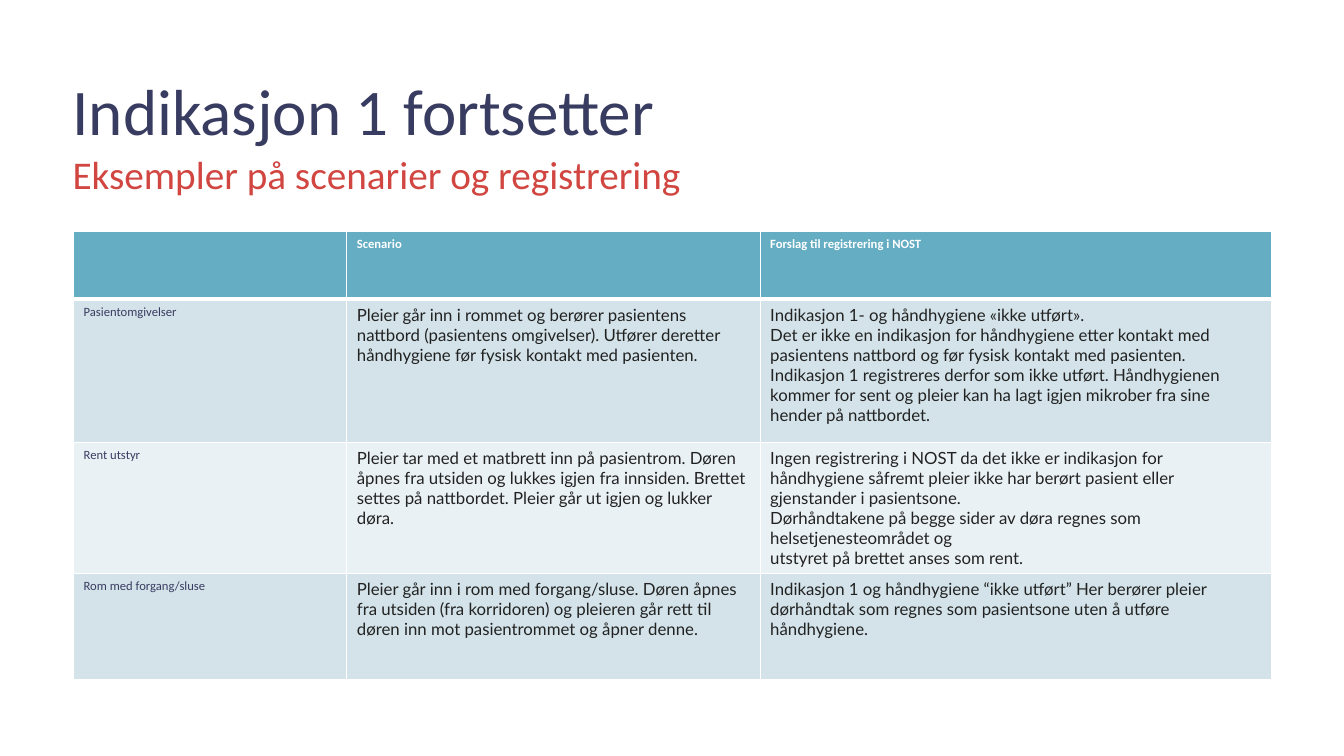
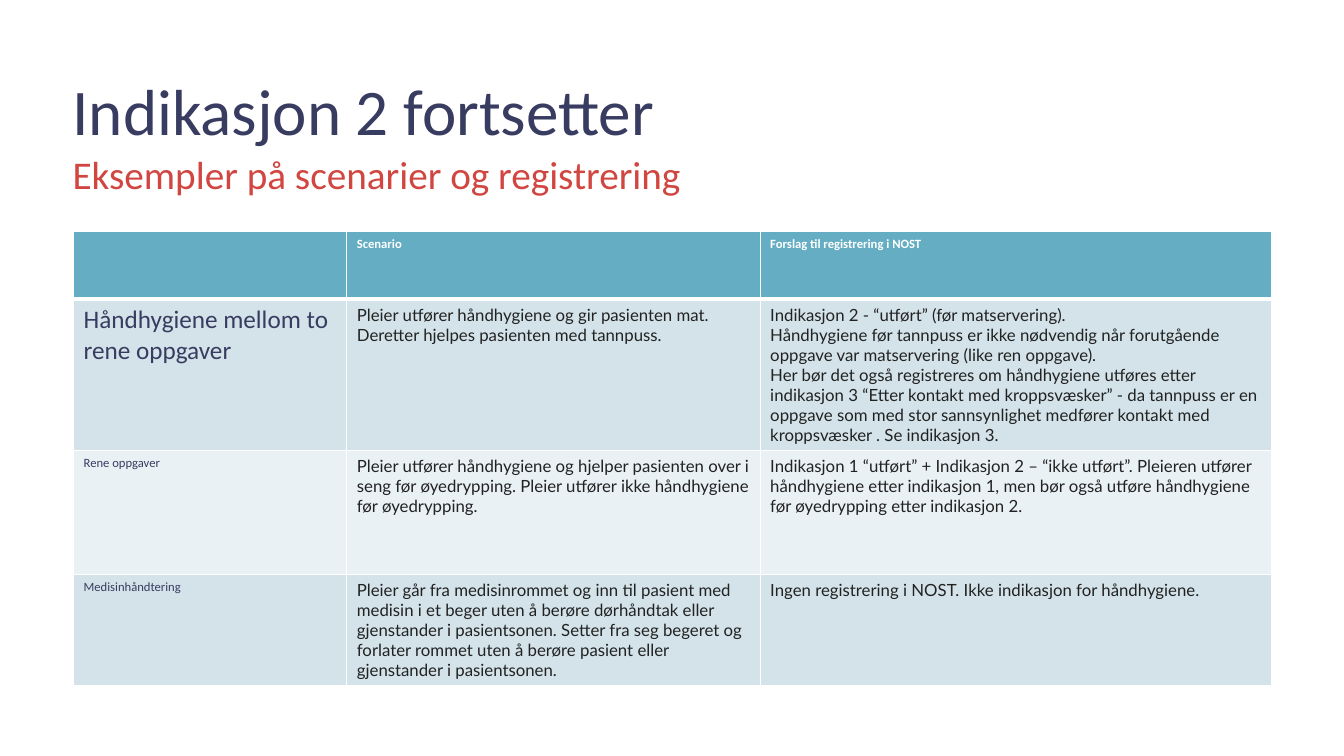
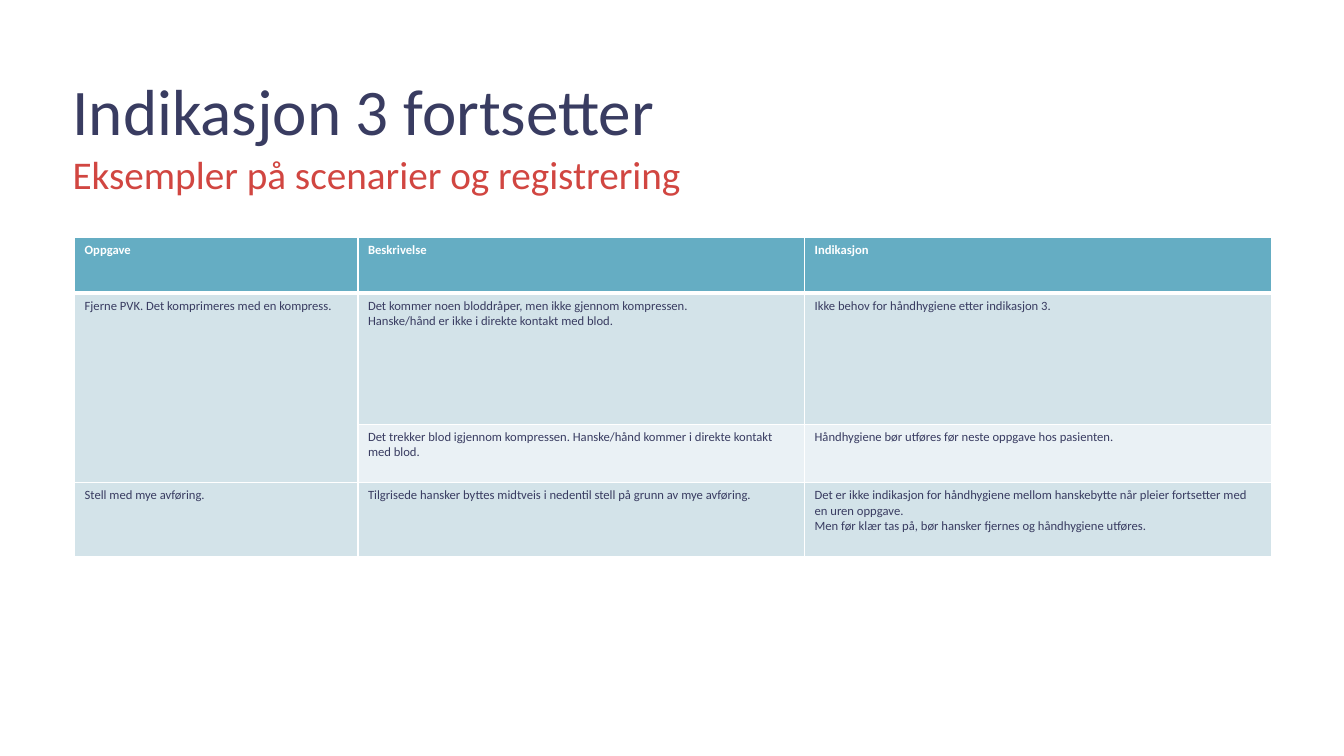
from dataclasses import dataclass

from lxml.etree import SubElement
from pptx import Presentation
from pptx.dml.color import RGBColor
from pptx.enum.text import MSO_ANCHOR, MSO_AUTO_SIZE, PP_ALIGN
from pptx.oxml.ns import qn
from pptx.util import Inches, Pt


@dataclass(frozen=True)
class TextStyle:
    """Font, size, colour and weight of a piece of text."""

    font: str
    size: float
    color: str
    bold: bool = False


@dataclass(frozen=True)
class Theme:
    """Colours, type styles and line widths of the whole deck."""

    title: TextStyle = TextStyle("Calibri", 46.5, "393C61")
    subtitle: TextStyle = TextStyle("Calibri", 28, "D14641")
    header: TextStyle = TextStyle("Calibri", 9, "FFFFFF", True)
    label: TextStyle = TextStyle("Calibri", 9, "393C61")
    large_label: TextStyle = TextStyle("Calibri", 18, "393C61")
    detail: TextStyle = TextStyle("Lato", 12, "222222")
    header_fill: str = "65ADC3"
    band_fills: tuple = ("EAF1F5", "D3E3E9")
    border: str = "FFFFFF"
    thin: int = 1
    thick: int = 3


@dataclass(frozen=True)
class TableFormat:
    """Place, grid and column styles of a table."""

    left: float
    top: float
    widths: tuple
    heights: tuple
    styles: tuple


THEME = Theme()
SUBTITLE = "Eksempler på scenarier og registrering"
SCENARIO_HEADER = ("", "Scenario", "Forslag til registrering i NOST")
SCENARIO_FORMAT = TableFormat(
    0.73, 2.3, (2.71, 4.1, 5.07), (0.67, 1.42, 1.23, 1.05),
    (THEME.label, THEME.detail, THEME.detail),
)
TASK_FORMAT = TableFormat(
    0.74, 2.36, (2.81, 4.43, 4.63), (0.55, 1.3, 0.58, 0.73), (THEME.label,) * 3,
)

INDICATION_1 = (
    SCENARIO_HEADER,
    (
        "Pasientomgivelser",
        "Pleier går inn i rommet og berører pasientens nattbord (pasientens "
        "omgivelser). Utfører deretter håndhygiene før fysisk kontakt med pasienten.",
        "Indikasjon 1- og håndhygiene «ikke utført».\n"
        "Det er ikke en indikasjon for håndhygiene etter kontakt med pasientens "
        "nattbord og før fysisk kontakt med pasienten. Indikasjon 1 registreres "
        "derfor som ikke utført. Håndhygienen kommer for sent og pleier kan ha lagt "
        "igjen mikrober fra sine hender på nattbordet.",
    ),
    (
        "Rent utstyr",
        "Pleier tar med et matbrett inn på pasientrom. Døren åpnes fra utsiden og "
        "lukkes igjen fra innsiden. Brettet settes på nattbordet. Pleier går ut "
        "igjen og lukker døra.",
        "Ingen registrering i NOST da det ikke er indikasjon for håndhygiene såfremt "
        "pleier ikke har berørt pasient eller gjenstander i pasientsone.\n"
        "Dørhåndtakene på begge sider av døra regnes som helsetjenesteområdet og\n"
        "utstyret på brettet anses som rent.",
    ),
    (
        "Rom med forgang/sluse",
        "Pleier går inn i rom med forgang/sluse. Døren åpnes fra utsiden (fra "
        "korridoren) og pleieren går rett til døren inn mot pasientrommet og åpner "
        "denne.",
        "Indikasjon 1 og håndhygiene “ikke utført” Her berører pleier dørhåndtak som "
        "regnes som pasientsone uten å utføre håndhygiene.",
    ),
)

INDICATION_2 = (
    SCENARIO_HEADER,
    (
        "Håndhygiene mellom to rene oppgaver",
        "Pleier utfører håndhygiene og gir pasienten mat. Deretter hjelpes pasienten "
        "med tannpuss.",
        "Indikasjon 2 - “utført” (før matservering).\n"
        "Håndhygiene før tannpuss er ikke nødvendig når forutgående oppgave var "
        "matservering (like ren oppgave).\n"
        "Her bør det også registreres om håndhygiene utføres etter indikasjon 3 "
        "“Etter kontakt med kroppsvæsker” - da tannpuss er en oppgave som med stor "
        "sannsynlighet medfører kontakt med kroppsvæsker . Se indikasjon 3.",
    ),
    (
        "Rene oppgaver",
        "Pleier utfører håndhygiene og hjelper pasienten over i seng før "
        "øyedrypping. Pleier utfører ikke håndhygiene før øyedrypping.",
        "Indikasjon 1 “utført” + Indikasjon 2 – “ikke utført”. Pleieren utfører "
        "håndhygiene etter indikasjon 1, men bør også utføre håndhygiene før "
        "øyedrypping etter indikasjon 2.",
    ),
    (
        "Medisinhåndtering",
        "Pleier går fra medisinrommet og inn til pasient med medisin i et beger uten "
        "å berøre dørhåndtak eller gjenstander i pasientsonen. Setter fra seg begeret "
        "og forlater rommet uten å berøre pasient eller gjenstander i pasientsonen.",
        "Ingen registrering i NOST. Ikke indikasjon for håndhygiene.",
    ),
)

INDICATION_3 = (
    ("Oppgave", "Beskrivelse", "Indikasjon"),
    (
        "Fjerne PVK. Det komprimeres med en kompress.",
        "Det kommer noen bloddråper, men ikke gjennom kompressen.\n"
        "Hanske/hånd er ikke i direkte kontakt med blod.",
        "Ikke behov for håndhygiene etter indikasjon 3.",
    ),
    (
        "",
        "Det trekker blod igjennom kompressen. Hanske/hånd kommer i direkte kontakt "
        "med blod.",
        "Håndhygiene bør utføres før neste oppgave hos pasienten.",
    ),
    (
        "Stell med mye avføring.",
        "Tilgrisede hansker byttes midtveis i nedentil stell på grunn av mye avføring.",
        "Det er ikke indikasjon for håndhygiene mellom hanskebytte når pleier "
        "fortsetter med en uren oppgave.\n"
        "Men før klær tas på, bør hansker fjernes og håndhygiene utføres.",
    ),
)


def apply_style(text_frame, style):
    """Format every run of a text frame."""
    for paragraph in text_frame.paragraphs:
        for run in paragraph.runs:
            run.font.name = style.font
            run.font.size = Pt(style.size)
            run.font.bold = style.bold
            run.font.color.rgb = RGBColor.from_string(style.color)


def place_placeholder(placeholder, top, height):
    """Move a layout placeholder and fix its text area for all slides."""
    placeholder.left, placeholder.top = Inches(0.72), Inches(top)
    placeholder.width, placeholder.height = Inches(11.88), Inches(height)
    frame = placeholder.text_frame
    frame.margin_left = frame.margin_top = frame.margin_right = frame.margin_bottom = 0
    frame.vertical_anchor = MSO_ANCHOR.TOP
    frame.word_wrap = True
    frame.auto_size = MSO_AUTO_SIZE.SHAPE_TO_FIT_TEXT


def prepare_layout(presentation):
    """Return the layout with the shared title and subtitle areas."""
    layout = presentation.slide_layouts[1]
    place_placeholder(layout.placeholders[0], 0.79, 0.7)
    place_placeholder(layout.placeholders[1], 1.49, 0.47)
    return layout


def fill_heading(placeholder, text, style, line_spacing):
    """Write one unbulleted heading line into a placeholder."""
    placeholder.text_frame.text = text
    paragraph = placeholder.text_frame.paragraphs[0]
    properties = paragraph._p.get_or_add_pPr()
    properties.set("marL", "0")
    properties.set("indent", "0")
    SubElement(properties, qn("a:buNone"))
    paragraph.alignment = PP_ALIGN.LEFT
    paragraph.line_spacing = line_spacing
    paragraph.space_before = Pt(0)
    apply_style(placeholder.text_frame, style)


def add_border(cell, side, width):
    """Add a solid border line to one side of a cell."""
    line = SubElement(cell._tc.get_or_add_tcPr(), qn(f"a:ln{side}"), w=str(Pt(width)))
    fill = SubElement(line, qn("a:solidFill"))
    SubElement(fill, qn("a:srgbClr"), val=THEME.border)


def format_cell(cell, row_index):
    """Give a cell its borders and the fill of its row."""
    widths = {"L": THEME.thin, "R": THEME.thin, "T": THEME.thin, "B": THEME.thin}
    if row_index == 0:
        widths["B"] = THEME.thick
    elif row_index == 1:
        widths["T"] = THEME.thick
    for side, width in widths.items():
        add_border(cell, side, width)
    color = THEME.band_fills[row_index % 2] if row_index else THEME.header_fill
    cell.fill.solid()
    cell.fill.fore_color.rgb = RGBColor.from_string(color)


def add_text_table(slide, rows, layout):
    """Add a banded table with a header row and return it."""
    table = slide.shapes.add_table(
        len(rows), len(layout.widths), Inches(layout.left), Inches(layout.top),
        Inches(sum(layout.widths)), Inches(sum(layout.heights)),
    ).table
    for column, width in zip(table.columns, layout.widths):
        column.width = Inches(width)
    for row_index, (texts, height) in enumerate(zip(rows, layout.heights)):
        table.rows[row_index].height = Inches(height)
        for column_index, text in enumerate(texts):
            cell = table.cell(row_index, column_index)
            format_cell(cell, row_index)
            if text:
                cell.text_frame.text = text
                style = layout.styles[column_index] if row_index else THEME.header
                apply_style(cell.text_frame, style)
    return table


def add_indication_slide(presentation, layout, number, rows, table_format):
    """Add a slide for one indication and return its table."""
    slide = presentation.slides.add_slide(layout)
    fill_heading(slide.shapes.title, f"Indikasjon {number} fortsetter", THEME.title, 0.9)
    fill_heading(slide.placeholders[1], SUBTITLE, THEME.subtitle, 1.0)
    return add_text_table(slide, rows, table_format)


def main():
    """Build and save the presentation."""
    presentation = Presentation()
    presentation.slide_width, presentation.slide_height = Inches(13.33), Inches(7.5)
    layout = prepare_layout(presentation)
    add_indication_slide(presentation, layout, 1, INDICATION_1, SCENARIO_FORMAT)
    hygiene = add_indication_slide(presentation, layout, 2, INDICATION_2, SCENARIO_FORMAT)
    apply_style(hygiene.cell(1, 0).text_frame, THEME.large_label)
    tasks = add_indication_slide(presentation, layout, 3, INDICATION_3, TASK_FORMAT)
    tasks.cell(1, 0).merge(tasks.cell(2, 0))
    presentation.save("out.pptx")


if __name__ == "__main__":
    main()
